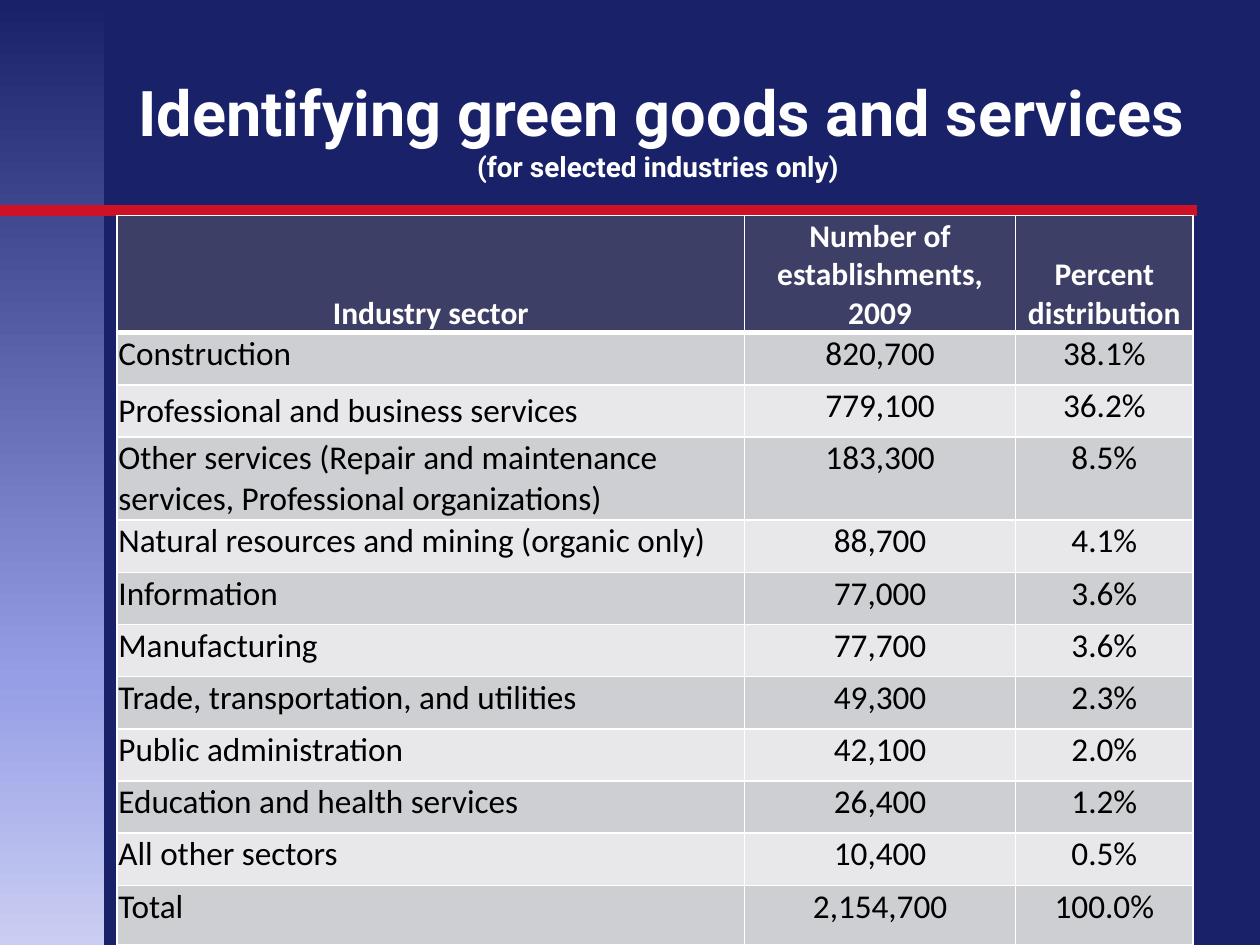
from collections import namedtuple

from lxml.etree import SubElement
from pptx import Presentation
from pptx.dml.color import RGBColor
from pptx.enum.shapes import MSO_CONNECTOR, MSO_SHAPE
from pptx.enum.text import MSO_ANCHOR, PP_ALIGN
from pptx.oxml.ns import qn
from pptx.util import Inches, Pt

COLORS = {
    "navy": "192168", "periwinkle": "969EE6", "lavender": "CACEF2",
    "red": "CE1126", "white": "FFFFFF", "black": "000000",
    "header": "3E3F67", "band_dark": "CECFD3", "band_light": "E8E8EB",
}
RAIL_STOPS = [(0, "navy"), (72, "periwinkle"), (100, "lavender")]

# The slide is a grid of 100 columns by 75 rows; boxes are given in grid units.
GRID_COLUMNS, GRID_ROWS = 100, 75
UNIT = Inches(10) / GRID_COLUMNS
Box = namedtuple("Box", "left top width height")

HEADER = ["Industry sector", "Number of establishments, 2009", "Percent distribution"]
SECTORS = [
    ("Construction", "820,700", "38.1%"),
    ("Professional and business services", "779,100", "36.2%"),
    ("Other services (Repair and maintenance services, Professional organizations)",
     "183,300", "8.5%"),
    ("Natural resources and mining (organic only)", "88,700", "4.1%"),
    ("Information", "77,000", "3.6%"),
    ("Manufacturing", "77,700", "3.6%"),
    ("Trade, transportation, and utilities", "49,300", "2.3%"),
    ("Public administration", "42,100", "2.0%"),
    ("Education and health services", "26,400", "1.2%"),
    ("All other sectors", "10,400", "0.5%"),
    ("Total", "2,154,700", "100.0%"),
]
COLUMN_WEIGHTS = [4.98, 2.15, 1.41]
SPECIAL_ROWS = {0: 9.3, 3: 6.6, len(SECTORS): 4.7}
MIDDLE_CELL = (2, 0)


def units(count):
    return round(count * UNIT)


def rgb(name):
    return RGBColor.from_string(COLORS[name])


def set_values(target, **values):
    for name, value in values.items():
        setattr(target, name, value)


def add_span(para, text, color, **values):
    span = para.add_run()
    span.text = text
    set_values(span.font, **values)
    span.font.color.rgb = rgb(color)


def add_side_rail(page, box):
    rail = page.shapes.add_shape(MSO_SHAPE.RECTANGLE, *map(units, box))
    rail.shadow.inherit = False
    rail.line.fill.background()
    rail.fill.gradient()
    rail.fill.gradient_angle = 270
    stops = rail._element.spPr.find(qn("a:gradFill")).find(qn("a:gsLst"))
    for stop in list(stops):
        stops.remove(stop)
    for position, color in RAIL_STOPS:
        stop = SubElement(stops, qn("a:gs"), pos=str(position * 1000))
        SubElement(stop, qn("a:srgbClr"), val=COLORS[color])


def add_rule(page, box):
    left, top, right = units(box.left), units(box.top), units(box.left + box.width)
    rule = page.shapes.add_connector(MSO_CONNECTOR.STRAIGHT, left, top, right, top)
    rule.line.color.rgb = rgb("red")
    rule.line.width = Pt(6)
    SubElement(rule._element.spPr, qn("a:effectLst"))


def add_title(page, box):
    frame = page.shapes.add_textbox(*map(units, box)).text_frame
    set_values(frame, word_wrap=True, vertical_anchor=MSO_ANCHOR.BOTTOM)
    para = frame.paragraphs[0]
    para.alignment = PP_ALIGN.CENTER
    look = {"name": "Roboto", "bold": True}
    add_span(para, "Identifying green goods and services", "white", size=Pt(36), **look)
    para.add_line_break()
    add_span(para, "(for selected industries only) ", "white", size=Pt(16), **look)


def add_borders(cell, **widths):
    properties = cell._tc.get_or_add_tcPr()
    for side in "LRTB":
        line = SubElement(properties, qn(f"a:ln{side}"), w=str(Pt(widths.get(side, 1))))
        fill = SubElement(line, qn("a:solidFill"))
        SubElement(fill, qn("a:srgbClr"), val=COLORS["white"])


def fill_cell(cell, text, row, column):
    is_header = row == 0
    if is_header:
        anchor, color, background = MSO_ANCHOR.BOTTOM, "white", "header"
    else:
        anchor, color = MSO_ANCHOR.TOP, "black"
        background = "band_dark" if row % 2 else "band_light"
    if (row, column) == MIDDLE_CELL:
        anchor = MSO_ANCHOR.MIDDLE
    set_values(cell, margin_left=Inches(0.01), margin_right=Inches(0.01),
               margin_top=Inches(0.01), margin_bottom=0, vertical_anchor=anchor)
    add_borders(cell, T=3 if row == 1 else 1, B=3 if is_header else 1)
    cell.fill.solid()
    cell.fill.fore_color.rgb = rgb(background)
    para = cell.text_frame.paragraphs[0]
    para.alignment = PP_ALIGN.CENTER if is_header or column else PP_ALIGN.LEFT
    add_span(para, text, color, name="Calibri", bold=is_header,
             size=Pt(18 if is_header else 19))


def add_sector_table(page, box):
    rows = [HEADER, *SECTORS]
    table = page.shapes.add_table(len(rows), len(HEADER), *map(units, box)).table
    for column, weight in zip(table.columns, COLUMN_WEIGHTS):
        column.width = units(box.width * weight / sum(COLUMN_WEIGHTS))
    plain_height = (box.height - sum(SPECIAL_ROWS.values())) / (len(rows) - len(SPECIAL_ROWS))
    for row, texts in enumerate(rows):
        table.rows[row].height = units(SPECIAL_ROWS.get(row, plain_height))
        for column, text in enumerate(texts):
            fill_cell(table.cell(row, column), text, row, column)


def main():
    deck = Presentation()
    set_values(deck, slide_width=units(GRID_COLUMNS), slide_height=units(GRID_ROWS))
    page = deck.slides.add_slide(deck.slide_layouts[6])
    page.background.fill.solid()
    page.background.fill.fore_color.rgb = rgb("navy")
    add_side_rail(page, Box(0, 0, 8.3, GRID_ROWS))
    add_rule(page, Box(0, 16.7, 95, 0))
    add_title(page, Box(10, 3, 85, 12))
    add_sector_table(page, Box(9.3, 17.1, 85.4, 57.9))
    deck.save("out.pptx")


if __name__ == "__main__":
    main()
